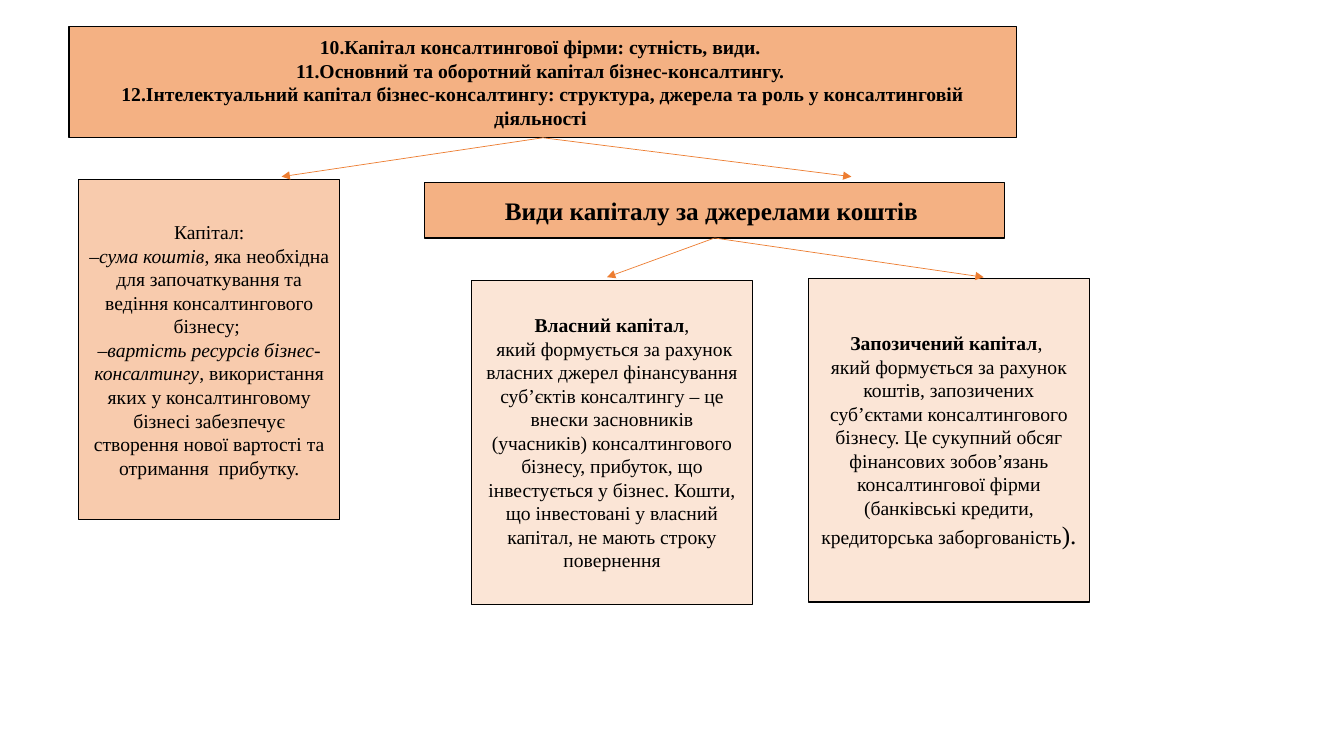
from dataclasses import dataclass

from lxml import etree
from pptx import Presentation
from pptx import util as u
from pptx.dml import color
from pptx.enum import shapes, text
from pptx.oxml import ns

FONT = "Times New Roman"
BLACK = "000000"
DARK, MEDIUM, LIGHT = "F4B183", "F8CBAD", "FBE5D6"
ARROW_COLOR = "ED7D31"
BOTTOM = 2


@dataclass(frozen=True)
class Span:
    words: str
    size: float = 14
    bold: bool = False
    italic: bool = False


@dataclass(frozen=True)
class Box:
    key: str
    left: float
    top: float
    width: float
    height: float
    fill: str
    paragraphs: list[list[Span]]


@dataclass(frozen=True)
class Arrow:
    source: str
    tip_x: float
    tip_y: float


BOXES = [
    Box("topics", 49.4, 18.9, 676.8, 79.5, DARK, [
        [Span("10.Капітал консалтингової фірми: сутність, види. ", bold=True)],
        [Span("11.Основний та оборотний капітал бізнес-консалтингу. ", bold=True)],
        [Span("12.Інтелектуальний капітал бізнес-консалтингу: структура, "
              "джерела та роль у консалтинговій діяльності ", bold=True)],
    ]),
    Box("capital", 56.2, 128.4, 186.5, 242.6, MEDIUM, [
        [Span("Капітал:")],
        [Span("–"), Span("сума коштів", italic=True),
         Span(", яка необхідна для започаткування та ведіння "
              "консалтингового бізнесу; ")],
        [Span("–"), Span("вартість ресурсів бізнес-консалтингу", italic=True),
         Span(", використання яких у консалтинговому бізнесі забезпечує "
              "створення нової вартості та отримання  прибутку.")],
    ]),
    Box("kinds", 303.4, 130.4, 414, 39.6, DARK, [
        [Span("Види капіталу за джерелами коштів ", size=18, bold=True)],
    ]),
    Box("own", 336.7, 200.4, 200.9, 231.3, LIGHT, [
        [Span("Власний капітал", bold=True), Span(",")],
        [Span(" який формується за рахунок власних джерел фінансування "
              "суб’єктів консалтингу – це внески засновників (учасників) "
              "консалтингового бізнесу, прибуток, що інвестується у бізнес. "
              "Кошти, що інвестовані у власний капітал, не мають строку "
              "повернення")],
    ]),
    Box("borrowed", 577.4, 198.8, 200.9, 231.3, LIGHT, [
        [Span("Запозичений капітал", bold=True), Span(", ")],
        [Span("який формується за рахунок коштів, запозичених суб’єктами "
              "консалтингового бізнесу. Це сукупний обсяг фінансових "
              "зобов’язань консалтингової фірми (банківські кредити, "
              "кредиторська заборгованість"), Span("). ", size=18)],
    ]),
]

ARROWS = [
    Arrow("topics", 201.1, 126.2),
    Arrow("kinds", 702.7, 198),
    Arrow("kinds", 433.6, 198),
    Arrow("topics", 608.2, 126.2),
]


def rgb(value: str) -> color.RGBColor:
    return color.RGBColor.from_string(value)


def add_span(para, words: str, *, size: float, bold: bool, italic: bool) -> None:
    run = para.add_run()
    run.text = words
    run.font.name = FONT
    run.font.size = u.Pt(size)
    run.font.bold = bold
    run.font.italic = italic
    run.font.color.rgb = rgb(BLACK)


def draw_box(page, box: Box):
    shape = page.shapes.add_shape(
        shapes.MSO_SHAPE.RECTANGLE,
        u.Pt(box.left), u.Pt(box.top), u.Pt(box.width), u.Pt(box.height))
    shape.shadow.inherit = False
    shape.fill.solid()
    shape.fill.fore_color.rgb = rgb(box.fill)
    shape.line.color.rgb = rgb(BLACK)
    shape.line.width = u.Pt(1)
    frame = shape.text_frame
    frame.word_wrap = True
    frame.vertical_anchor = text.MSO_ANCHOR.MIDDLE
    for index, spans in enumerate(box.paragraphs):
        para = frame.add_paragraph() if index else frame.paragraphs[0]
        para.alignment = text.PP_ALIGN.CENTER
        for span in spans:
            add_span(para, span.words, size=span.size,
                     bold=span.bold, italic=span.italic)
    return shape


def draw_arrow(page, arrow: Arrow, source) -> None:
    """Run from the middle of the source's bottom side to the tip."""
    line = page.shapes.add_connector(
        shapes.MSO_CONNECTOR.STRAIGHT,
        source.left + source.width // 2, source.top + source.height,
        u.Pt(arrow.tip_x), u.Pt(arrow.tip_y))
    line.begin_connect(source, BOTTOM)
    line.line.color.rgb = rgb(ARROW_COLOR)
    line.line.width = u.Pt(0.5)
    etree.SubElement(line.line._get_or_add_ln(), ns.qn("a:tailEnd"), type="triangle")
    etree.SubElement(line._element.spPr, ns.qn("a:effectLst"))


def main() -> None:
    deck = Presentation()
    deck.slide_width, deck.slide_height = u.Pt(960), u.Pt(540)
    page = deck.slides.add_slide(deck.slide_layouts[6])
    drawn = {box.key: draw_box(page, box) for box in BOXES}
    for arrow in ARROWS:
        draw_arrow(page, arrow, drawn[arrow.source])
    deck.save("out.pptx")


if __name__ == "__main__":
    main()
